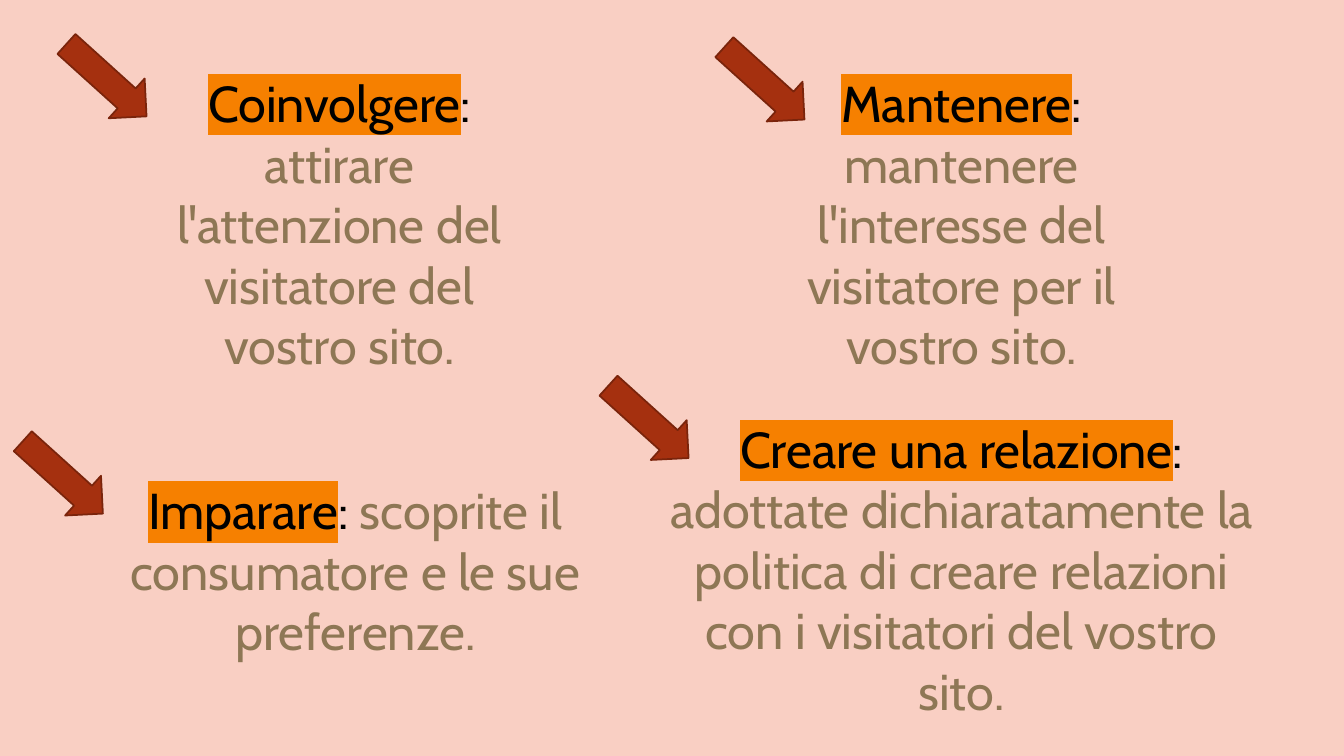
from dataclasses import dataclass

from lxml import etree
from pptx import Presentation
from pptx.dml.color import RGBColor
from pptx.enum import shapes, text
from pptx.oxml import ns
from pptx.util import Cm, Pt


@dataclass(frozen=True)
class Theme:
    back: str = "F9CFC3"
    term: str = "000000"
    body: str = "8E7755"
    mark: str = "F68000"
    arrow: str = "A5300F"
    edge: str = "7A240B"
    font: str = "Cabin"
    size: float = 36
    line: float = 1.25


THEME = Theme()

GOALS = [
    ("Coinvolgere", "attirare l'attenzione del visitatore del vostro sito.",
     (3.35, 1.7, 10.41, 8.71), (2.01, 0.66)),
    ("Mantenere", "mantenere l'interesse del visitatore per il vostro sito.",
     (19.69, 1.7, 9.09, 8.71), (18.59, 0.74)),
    ("Imparare", "scoprite il consumatore e le sue preferenze.",
     (2.16, 11.96, 13.59, 5.64), (0.91, 10.67)),
    ("Creare una relazione",
     "adottate dichiaratamente la politica di creare relazioni "
     "con i visitatori del vostro sito.",
     (16.36, 10.41, 15.75, 8.71), (15.67, 9.27)),
]


def apply(obj, form):
    for name, value in form.items():
        setattr(obj, name, value)


def paint(fill, color):
    fill.solid()
    fill.fore_color.rgb = RGBColor.from_string(color)


def add_run(para, words, color, mark=None):
    run = para.add_run()
    run.text = words
    apply(run.font, {"name": THEME.font, "size": Pt(THEME.size)})
    paint(run.font.fill, color)
    if mark:
        props = run.font._element
        light = etree.Element(ns.qn("a:highlight"))
        etree.SubElement(light, ns.qn("a:srgbClr"), val=mark)
        props.find(ns.qn("a:solidFill")).addnext(light)


def add_goal(slide, term, words, area):
    frame = slide.shapes.add_textbox(*map(Cm, area)).text_frame
    apply(frame, {"word_wrap": True,
                  "auto_size": text.MSO_AUTO_SIZE.SHAPE_TO_FIT_TEXT})
    para = frame.paragraphs[0]
    para.alignment = text.PP_ALIGN.CENTER
    add_run(para, term, THEME.term, THEME.mark)
    add_run(para, ": ", THEME.term)
    add_run(para, words, THEME.body)


def add_arrow(slide, left, top):
    arrow = slide.shapes.add_shape(shapes.MSO_SHAPE.DOWN_ARROW,
                                   Cm(left), Cm(top), Cm(1.35), Cm(2.72))
    apply(arrow, {"rotation": 312.1})
    arrow.shadow.inherit = False
    paint(arrow.fill, THEME.arrow)
    paint(arrow.line.fill, THEME.edge)
    arrow.line.width = Pt(THEME.line)


def main():
    deck = Presentation()
    apply(deck, {"slide_width": Cm(33.87), "slide_height": Cm(19.05)})
    slide = deck.slides.add_slide(deck.slide_layouts[6])
    paint(slide.background.fill, THEME.back)
    for term, words, area, _ in GOALS:
        add_goal(slide, term, words, area)
    for *_, spot in GOALS:
        add_arrow(slide, *spot)
    deck.save("out.pptx")


if __name__ == "__main__":
    main()
